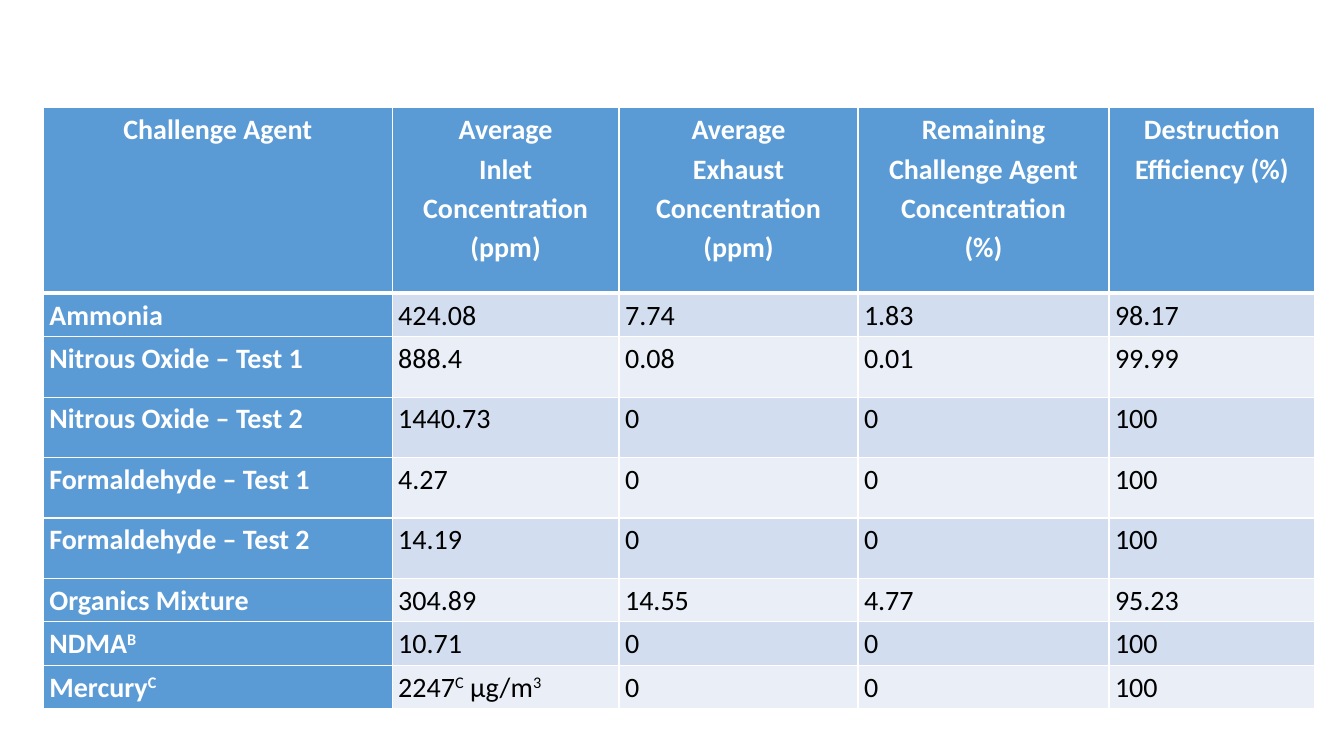
from lxml import etree
from pptx import Presentation
from pptx.dml.color import RGBColor
from pptx.enum.text import PP_ALIGN
from pptx.oxml.ns import qn
from pptx.util import Inches, Pt

HEADERS = [
    "Challenge Agent",
    "Average\nInlet Concentration\n(ppm)",
    "Average\nExhaust Concentration\n(ppm)",
    "Remaining Challenge Agent\nConcentration\n(%)",
    "Destruction Efficiency (%)",
]
RESULTS = [
    ("Ammonia", "424.08", "7.74", "1.83", "98.17"),
    ("Nitrous Oxide – Test 1", "888.4", "0.08", "0.01", "99.99"),
    ("Nitrous Oxide – Test 2", "1440.73", "0", "0", "100"),
    ("Formaldehyde – Test 1", "4.27", "0", "0", "100"),
    ("Formaldehyde – Test 2", "14.19", "0", "0", "100"),
    ("Organics Mixture", "304.89", "14.55", "4.77", "95.23"),
    ("NDMA^B^", "10.71", "0", "0", "100"),
    ("Mercury^C^", "2247^C^ µg/m^3^", "0", "0", "100"),
]
COLORS = {
    "head": "5B9BD5",
    "odd": "D2DEEF",
    "even": "EAEFF7",
    "light": "FFFFFF",
    "dark": "000000",
}
COL_WIDTHS = [3.46, 2.25, 2.37, 2.49, 2.04]
ROW_HEIGHTS = [1.84, 0.43] + [0.6] * 4 + [0.43] * 3
LEFT, TOP = 0.43, 1.07


def color(name):
    return RGBColor.from_string(COLORS[name])


def set_borders(cell, widths):
    tcPr = cell._tc.get_or_add_tcPr()
    for side, width in zip("LRTB", widths):
        ln = etree.SubElement(tcPr, qn(f"a:ln{side}"), w=str(Pt(width)))
        fill = etree.SubElement(ln, qn("a:solidFill"))
        etree.SubElement(fill, qn("a:srgbClr"), val=COLORS["light"])


def write_cell(cell, text, is_top, is_head, is_last):
    tf = cell.text_frame
    tf.text = text.replace("^", "")
    for p, line in zip(tf.paragraphs, text.split("\n")):
        p.line_spacing = 1.15
        p.alignment = PP_ALIGN.CENTER if is_top else PP_ALIGN.LEFT
        if is_last:
            p.space_after = Pt(10)
        p.clear()
        for i, part in enumerate(line.split("^")):
            if not part:
                continue
            r = p.add_run()
            r.text = part
            r.font.name = "Calibri"
            r.font.size = Pt(20)
            r.font.bold = is_head
            r.font.color.rgb = color("light" if is_head else "dark")
            if i % 2:
                r._r.get_or_add_rPr().set("baseline", "30000")


def format_cell(cell, row, col, text):
    is_top = row == 0
    is_head = is_top or col == 0
    cell.margin_left = cell.margin_right = Inches(0.06)
    cell.margin_top = cell.margin_bottom = 0
    set_borders(cell, (1, 1, 3 if row == 1 else 1, 3 if is_top else 1))
    cell.fill.solid()
    band = "odd" if row % 2 else "even"
    cell.fill.fore_color.rgb = color("head" if is_head else band)
    write_cell(cell, text, is_top, is_head, col == len(COL_WIDTHS) - 1)


def main():
    prs = Presentation()
    prs.slide_width, prs.slide_height = Inches(13.33), Inches(7.5)
    s = prs.slides.add_slide(prs.slide_layouts[6])
    rows = [HEADERS, *RESULTS]
    frame = s.shapes.add_table(
        len(rows), len(COL_WIDTHS), Inches(LEFT), Inches(TOP),
        Inches(sum(COL_WIDTHS)), Inches(sum(ROW_HEIGHTS)),
    )
    table = frame.table
    table.first_col = True
    for column, width in zip(table.columns, COL_WIDTHS):
        column.width = Inches(width)
    for row, height in zip(table.rows, ROW_HEIGHTS):
        row.height = Inches(height)
    for i, texts in enumerate(rows):
        for j, text in enumerate(texts):
            format_cell(table.cell(i, j), i, j, text)
    prs.save("out.pptx")


if __name__ == "__main__":
    main()
